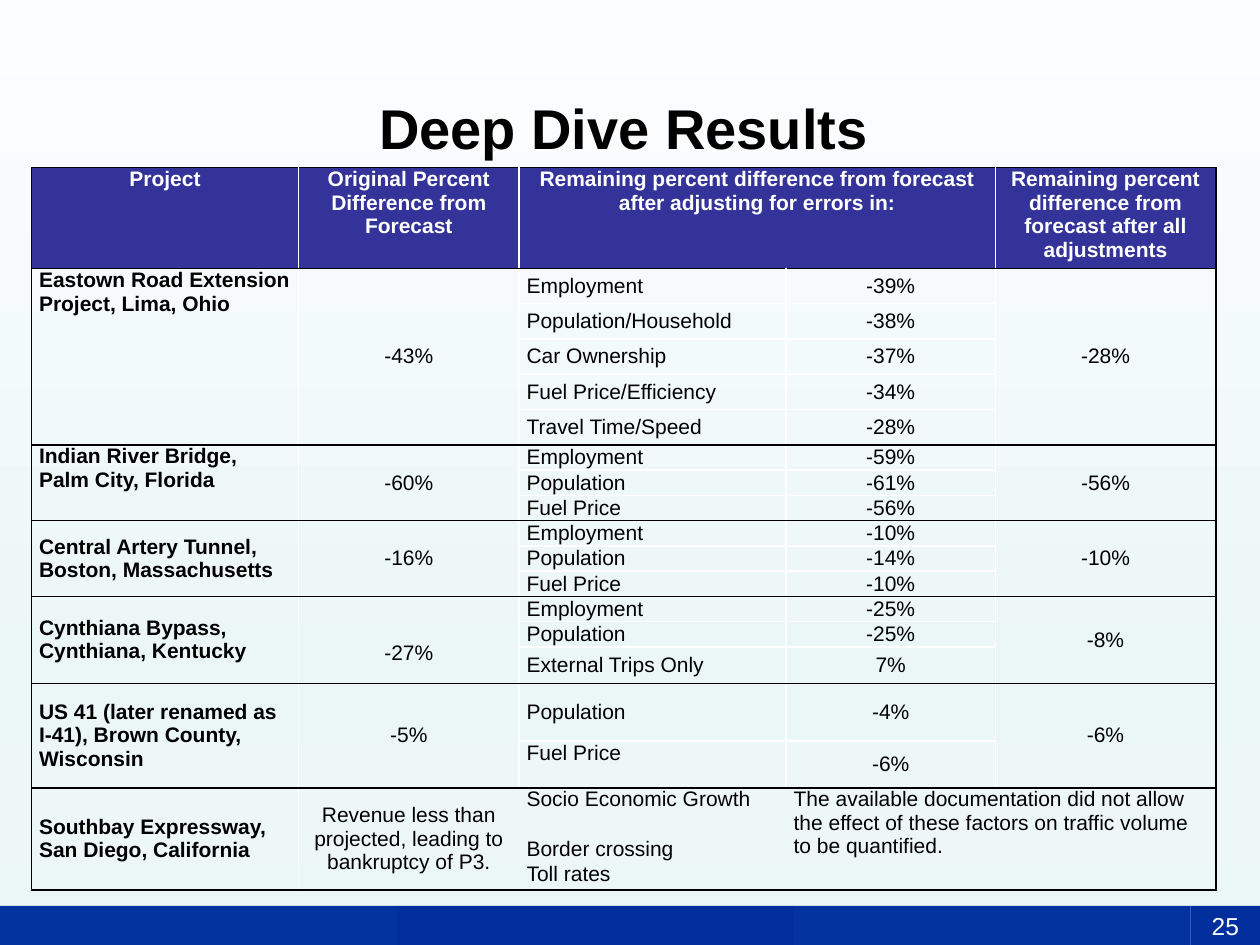
import copy
from dataclasses import dataclass
from typing import Optional

import pptx
import pptx.dml.color
import pptx.enum.shapes
import pptx.enum.text
import pptx.oxml.ns
import pptx.util
from lxml import etree
from pptx.util import Inches

ALIGN = pptx.enum.text.PP_ALIGN
ANCHOR = pptx.enum.text.MSO_ANCHOR
qn = pptx.oxml.ns.qn


@dataclass(frozen=True)
class Theme:
    font: str = "Arial"
    title_size: int = 32
    table_size: int = 12
    number_size: int = 14
    black: str = "000000"
    white: str = "FFFFFF"
    header: str = "333399"
    bar: str = "02339E"
    bar_dark: str = "002E9C"
    sky: tuple = ((0, "FCFDFE"), (74, "EBF6F7"), (83, "EEF7F8"), (100, "EBF6F7"))


@dataclass(frozen=True)
class Factor:
    name: str
    change: str
    height: float
    anchor: ANCHOR = ANCHOR.MIDDLE


@dataclass(frozen=True)
class Project:
    name: str
    original: str
    factors: tuple
    final: str = ""
    name_anchor: ANCHOR = ANCHOR.MIDDLE
    original_drop: float = 0
    note: str = ""


@dataclass(frozen=True)
class Edges:
    """Border colours of a cell; None leaves that side open."""
    left: Optional[str]
    right: Optional[str]
    top: Optional[str]
    bottom: Optional[str]


THEME = Theme()
COLUMNS = (2.12, 1.75, 2.12, 1.66, 1.75)
HEADER_HEIGHT = 0.59
HEADERS = (
    (0, 1, "Project"),
    (1, 1, "Original Percent Difference from Forecast"),
    (2, 2, "Remaining percent difference from forecast after adjusting for errors in:"),
    (4, 1, "Remaining percent difference from forecast after all adjustments"),
)
PROJECTS = (
    Project("Eastown Road Extension Project, Lima, Ohio", "-43%", (
        Factor("Employment", "-39%", 0.28),
        Factor("Population/Household", "-38%", 0.28),
        Factor("Car Ownership", "-37%", 0.28),
        Factor("Fuel Price/Efficiency", "-34%", 0.28),
        Factor("Travel Time/Speed", "-28%", 0.28)), "-28%", ANCHOR.TOP),
    Project("Indian River Bridge, Palm City, Florida", "-60%", (
        Factor("Employment", "-59%", 0.2),
        Factor("Population", "-61%", 0.2),
        Factor("Fuel Price", "-56%", 0.2)), "-56%", ANCHOR.TOP),
    Project("Central Artery Tunnel, Boston, Massachusetts", "-16%", (
        Factor("Employment", "-10%", 0.2),
        Factor("Population", "-14%", 0.2),
        Factor("Fuel Price", "-10%", 0.2)), "-10%"),
    Project("Cynthiana Bypass, Cynthiana, Kentucky", "-27%", (
        Factor("Employment", "-25%", 0.2),
        Factor("Population", "-25%", 0.2),
        Factor("External Trips Only", "7%", 0.29)), "-8%", original_drop=0.22),
    Project("US 41 (later renamed as I-41), Brown County, Wisconsin", "-5%", (
        Factor("Population", "-4%", 0.46),
        Factor("Fuel Price", "-6%", 0.37, ANCHOR.TOP)), "-6%"),
    Project("Southbay Expressway, San Diego, California",
            "Revenue less than projected, leading to bankruptcy of P3.", (
                Factor("Socio Economic Growth", "", 0.39, ANCHOR.TOP),
                Factor("Border crossing", "", 0.2, ANCHOR.TOP),
                Factor("Toll rates", "", 0.22, ANCHOR.TOP)),
            note="The available documentation did not allow the effect of these "
                 "factors on traffic volume to be quantified."),
)


def rgb(color: str) -> pptx.dml.color.RGBColor:
    return pptx.dml.color.RGBColor.from_string(color)


def write(frame, text: str, size: int, color: str, bold: bool = False,
          align: ALIGN = ALIGN.CENTER) -> None:
    frame.word_wrap = True
    para = frame.paragraphs[0]
    para.alignment = align
    span = para.add_run()
    span.text = text
    span.font.name = THEME.font
    span.font.size = pptx.util.Pt(size)
    span.font.bold = bold
    span.font.color.rgb = rgb(color)


def paint_background(page) -> None:
    fill = page.background.fill
    fill.gradient()
    fill.gradient_angle = 270
    stops = page.element.find(".//" + qn("a:gsLst"))
    for _ in THEME.sky[2:]:
        stops.append(copy.deepcopy(stops[0]))
    for stop, (position, color) in zip(fill.gradient_stops, THEME.sky):
        stop.position = position / 100
        stop.color.rgb = rgb(color)


def add_bar(page, left: float, width: float, color: str):
    bar = page.shapes.add_shape(pptx.enum.shapes.MSO_SHAPE.RECTANGLE, Inches(left),
                                Inches(7.19), Inches(width), Inches(0.32))
    bar.shadow.inherit = False
    bar.fill.solid()
    bar.fill.fore_color.rgb = rgb(color)
    bar.line.fill.background()
    return bar


def set_borders(cell, edges: Edges) -> None:
    """Put the border lines ahead of the cell's fill, as the schema orders them."""
    properties = cell._tc.get_or_add_tcPr()
    sides = (("a:lnL", edges.left), ("a:lnR", edges.right),
             ("a:lnT", edges.top), ("a:lnB", edges.bottom))
    for index, (tag, color) in enumerate(sides):
        line = etree.Element(qn(tag), w=str(pptx.util.Pt(1)))
        if color:
            solid = etree.SubElement(line, qn("a:solidFill"))
            etree.SubElement(solid, qn("a:srgbClr"), val=color)
        else:
            etree.SubElement(line, qn("a:noFill"))
        properties.insert(index, line)


def fill_cell(table, row: int, column: int, text: str, edges: Edges, rows: int = 1,
              columns: int = 1, align: ALIGN = ALIGN.CENTER, anchor: ANCHOR = ANCHOR.MIDDLE,
              bold: bool = False, color: str = THEME.black, back: Optional[str] = None,
              drop: float = 0) -> None:
    cell = table.cell(row, column)
    if rows * columns > 1:
        cell.merge(table.cell(row + rows - 1, column + columns - 1))
    for r in range(row, row + rows):
        for c in range(column, column + columns):
            part = table.cell(r, c)
            part.margin_left = part.margin_right = Inches(0.06)
            part.margin_top, part.margin_bottom = Inches(drop), 0
            if back:
                part.fill.solid()
                part.fill.fore_color.rgb = rgb(back)
            else:
                part.fill.background()
            set_borders(part, edges)
    cell.vertical_anchor = anchor
    write(cell.text_frame, text, THEME.table_size, color, bold, align)
    cell.text_frame.paragraphs[0].space_after = pptx.util.Pt(1)


def fill_project(table, top: int, project: Project) -> None:
    black, white = THEME.black, THEME.white
    count = len(project.factors)
    inner = None if project.note else white
    fill_cell(table, top, 0, project.name, Edges(black, white, black, black), count,
              align=ALIGN.LEFT, anchor=project.name_anchor, bold=True)
    fill_cell(table, top, 1, project.original, Edges(white, inner, black, black), count,
              drop=project.original_drop)
    for index, factor in enumerate(project.factors):
        edges = Edges(inner, inner, black if index == 0 else inner,
                      black if index == count - 1 else inner)
        fill_cell(table, top + index, 2, factor.name, edges, align=ALIGN.LEFT,
                  anchor=factor.anchor)
        if not project.note:
            fill_cell(table, top + index, 3, factor.change, edges)
    if project.note:
        fill_cell(table, top, 3, project.note, Edges(None, black, black, black), count, 2,
                  ALIGN.LEFT, ANCHOR.TOP)
    else:
        fill_cell(table, top, 4, project.final, Edges(white, black, black, black), count)


def add_results(page) -> None:
    heights = [HEADER_HEIGHT] + [f.height for p in PROJECTS for f in p.factors]
    table = page.shapes.add_table(len(heights), len(COLUMNS), Inches(0.25), Inches(1.33),
                                  Inches(sum(COLUMNS)), Inches(sum(heights))).table
    table.first_row = table.horz_banding = False
    for column, width in zip(table.columns, COLUMNS):
        column.width = Inches(width)
    for row, height in zip(table.rows, heights):
        row.height = Inches(height)
    for column, columns, text in HEADERS:
        edges = Edges(THEME.black if column == 0 else THEME.white,
                      THEME.black if column == 4 else THEME.white, THEME.black, THEME.black)
        fill_cell(table, 0, column, text, edges, columns=columns, anchor=ANCHOR.TOP,
                  bold=True, color=THEME.white, back=THEME.header)
    top = 1
    for project in PROJECTS:
        fill_project(table, top, project)
        top += len(project.factors)


def main() -> None:
    deck = pptx.Presentation()
    deck.slide_width, deck.slide_height = Inches(10), Inches(7.5)
    page = deck.slides.add_slide(deck.slide_layouts[6])
    paint_background(page)
    for index, color in enumerate((THEME.bar, THEME.bar_dark, THEME.bar)):
        add_bar(page, 3.15 * index, 3.15, color)

    title = page.shapes.add_textbox(Inches(0.45), Inches(0.63), Inches(9), Inches(0.59))
    title.text_frame.margin_top, title.text_frame.margin_bottom = Inches(0.11), 0
    write(title.text_frame, "Deep Dive Results", THEME.title_size, THEME.black, bold=True)

    number = add_bar(page, 9.45, 0.55, THEME.bar_dark)
    number.text_frame.vertical_anchor = ANCHOR.MIDDLE
    write(number.text_frame, "25", THEME.number_size, THEME.white)
    add_results(page)
    deck.save("out.pptx")


if __name__ == "__main__":
    main()
